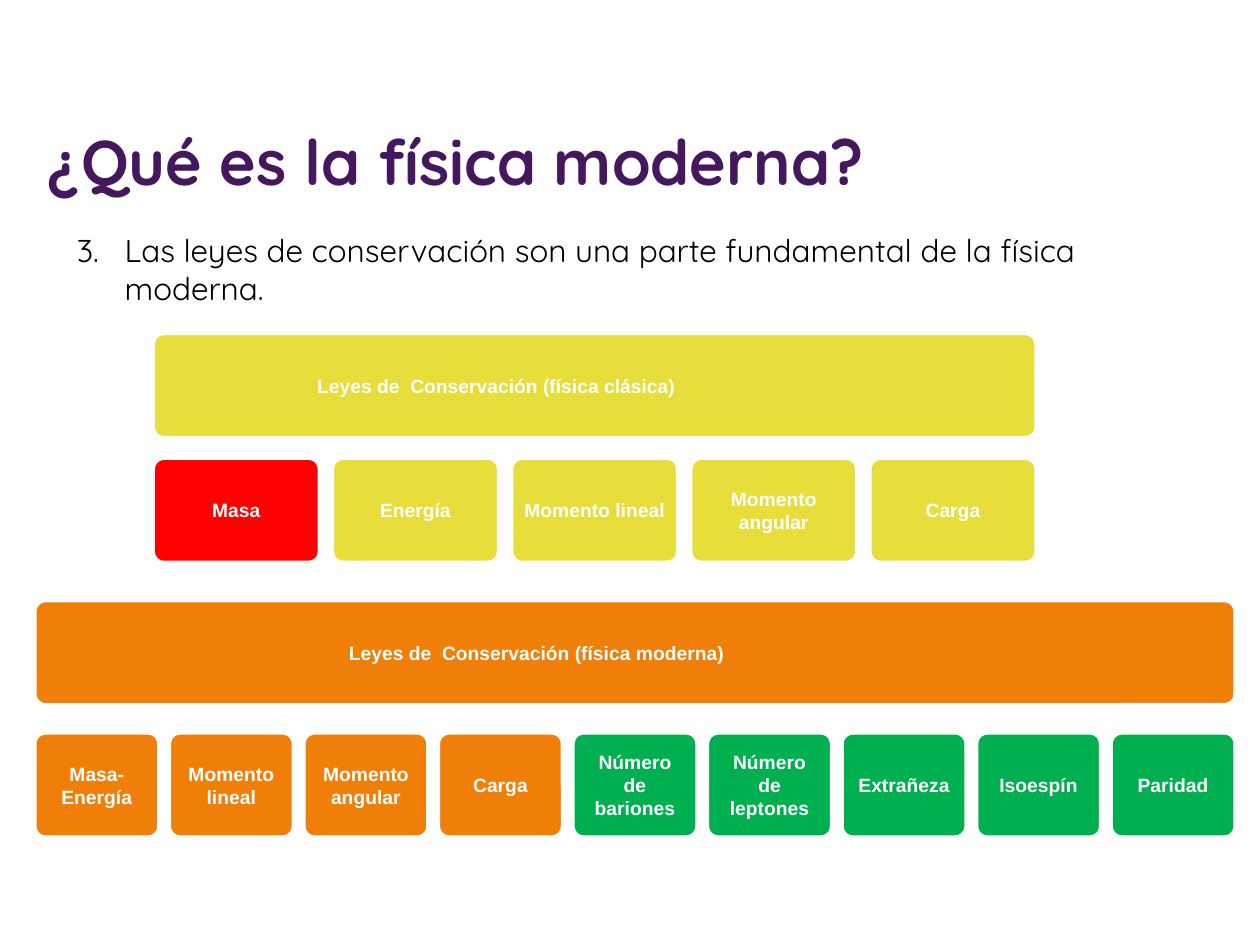
from lxml.etree import SubElement
from pptx import Presentation
from pptx.dml.color import RGBColor
from pptx.enum.shapes import MSO_SHAPE as Shape
from pptx.enum.text import MSO_ANCHOR as Anchor, MSO_AUTO_SIZE as AutoSize, PP_ALIGN as Align
from pptx.oxml.ns import qn
from pptx.util import Inches, Pt

YELLOW, ORANGE, GREEN, RED = "E7DD3B", "F07F09", "00B050", "FF0000"
WHITE, PURPLE, BLACK = "FFFFFF", "45185E", "000000"
ROW_HEIGHT = 0.82
INSET = 0.07


def color(value):
    """Turn a hex string into a colour."""
    return RGBColor.from_string(value)


def add_span(para, text, font, size, shade, bold=False):
    """Add one formatted run to a paragraph."""
    span = para.add_run()
    span.text = text
    span.font.name = font
    span.font.size = Pt(size)
    span.font.bold = bold
    span.font.color.rgb = color(shade)


def place_text(box, left, top, width, height):
    """Move a placeholder and return its left-aligned first paragraph."""
    box.left, box.top = Inches(left), Inches(top)
    box.width, box.height = Inches(width), Inches(height)
    frame = box.text_frame
    frame.word_wrap = True
    frame.auto_size = AutoSize.NONE
    frame.vertical_anchor = Anchor.MIDDLE
    para = frame.paragraphs[0]
    para.alignment = Align.LEFT
    para.space_before = Pt(0)
    return para


def number_from(para, start, indent):
    """Number a paragraph from the given start with a hanging indent."""
    props = para._p.get_or_add_pPr()
    props.set("marL", str(Inches(indent)))
    props.set("indent", str(-Inches(indent)))
    SubElement(props, qn("a:buFont"), typeface="+mj-lt")
    SubElement(props, qn("a:buAutoNum"), type="arabicPeriod", startAt=str(start))


def add_card(group, left, top, width, text, fill, right_inset=INSET):
    """Add a rounded card with centred bold text."""
    card = group.shapes.add_shape(
        Shape.ROUNDED_RECTANGLE, Inches(left), Inches(top), Inches(width), Inches(ROW_HEIGHT))
    card.adjustments[0] = 0.1
    card.shadow.inherit = False
    card.fill.solid()
    card.fill.fore_color.rgb = color(fill)
    card.line.color.rgb = color(WHITE)
    card.line.width = Pt(1.5)
    frame = card.text_frame
    frame.word_wrap = True
    frame.vertical_anchor = Anchor.MIDDLE
    frame.margin_left = frame.margin_top = frame.margin_bottom = Inches(INSET)
    frame.margin_right = Inches(right_inset)
    para = frame.paragraphs[0]
    para.alignment = Align.CENTER
    add_span(para, text, "Arial", 11, WHITE, bold=True)


def add_laws(page, left, width, header_top, row_top, gap, header, fill, laws):
    """Add a header card above a row of equal law cards."""
    group = page.shapes.add_group_shape()
    add_card(group, left, header_top, width, header, fill, right_inset=1.63)
    card_width = (width - gap * (len(laws) - 1)) / len(laws)
    for column, (law, shade) in enumerate(laws):
        add_card(group, left + column * (card_width + gap), row_top, card_width, law, shade)


def main():
    """Build the slide and save it."""
    deck = Presentation()
    deck.slide_width, deck.slide_height = Inches(10), Inches(7.5)
    page = deck.slides.add_slide(deck.slide_layouts[1])

    title = place_text(page.shapes.title, 0.28, 0.92, 7.17, 0.7)
    add_span(title, "¿Qué es la física moderna?", "Quicksand", 36, PURPLE, bold=True)

    body = place_text(page.placeholders[1], 0.51, 1.78, 8.27, 0.71)
    number_from(body, 3, 0.38)
    add_span(body, "Las leyes de conservación son una parte fundamental de la física moderna.",
             "Quicksand", 18, BLACK)

    classical = [("Masa", RED)] + [
        (law, YELLOW) for law in ("Energía", "Momento lineal", "Momento angular", "Carga")]
    modern = [
        (law, ORANGE) for law in ("Masa-Energía", "Momento lineal", "Momento angular", "Carga")
    ] + [
        (law, GREEN) for law in ("Número de bariones", "Número de leptones",
                                 "Extrañeza", "Isoespín", "Paridad")]
    add_laws(page, 1.22, 7, 2.65, 3.64, 0.11,
             "Leyes de  Conservación (física clásica)", YELLOW, classical)
    add_laws(page, 0.28, 9.52, 4.77, 5.82, 0.09,
             "Leyes de  Conservación (física moderna)", ORANGE, modern)

    deck.save("out.pptx")


if __name__ == "__main__":
    main()
